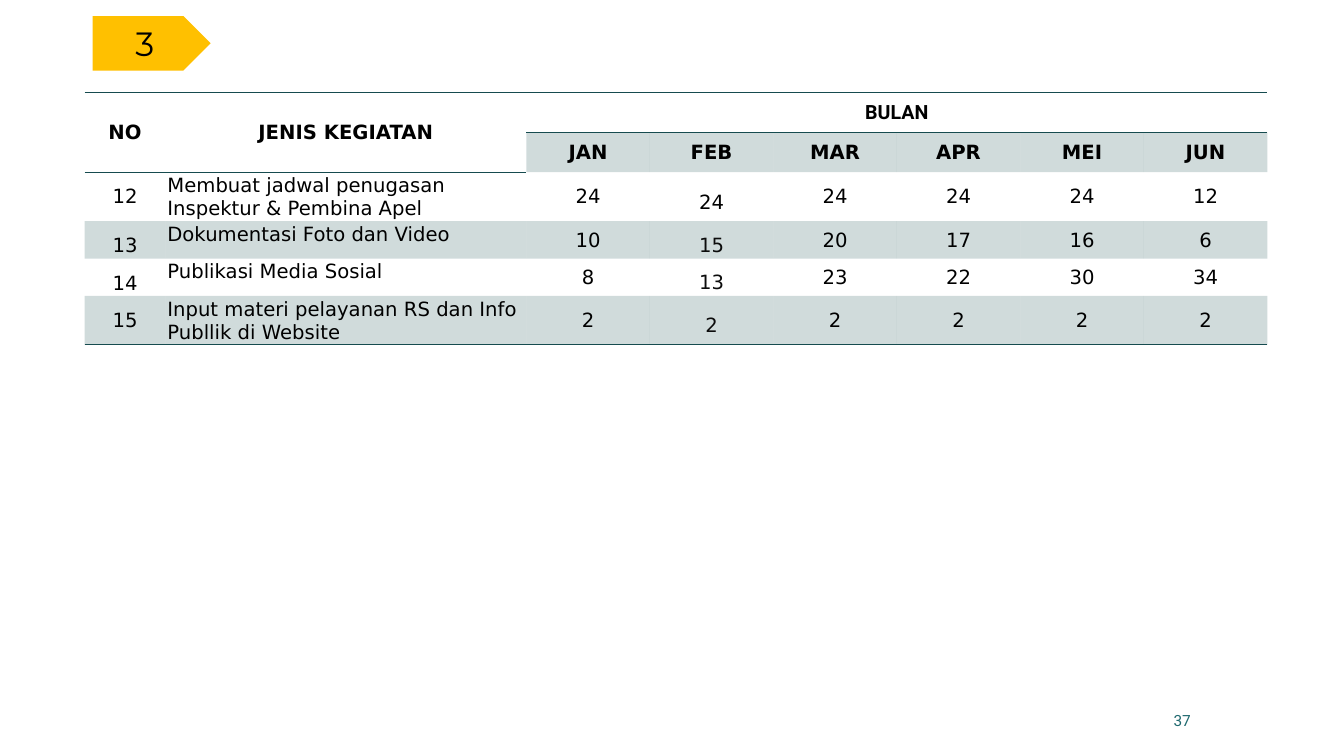
from dataclasses import dataclass

from lxml.etree import SubElement
from pptx import Presentation
from pptx.dml.color import RGBColor
from pptx.enum.shapes import MSO_SHAPE
from pptx.enum.text import MSO_ANCHOR, PP_ALIGN
from pptx.oxml import parse_xml
from pptx.oxml.ns import nsdecls, qn
from pptx.util import Inches, Pt

COLORS = {"ink": "000000", "soft": "0C0C0C", "teal": "164B4F",
          "page": "1F696F", "gold": "FFC000"}
NO_GRID_STYLE = "{2D5ABB26-0587-4C30-8999-92F81FD0307C}"


@dataclass(frozen=True)
class CellStyle:
    margins: tuple[float, float, float, float]  # left, top, right, bottom
    align: PP_ALIGN = PP_ALIGN.CENTER
    anchor: MSO_ANCHOR = MSO_ANCHOR.MIDDLE
    spacing: float = 1.0
    bold: bool = False
    font: str = "DejaVu Sans"


@dataclass(frozen=True)
class Activity:
    no: int
    name: str
    counts: tuple[int, ...]
    height: float
    feb_color: str = "soft"


HEADER = CellStyle((0.2, 0.08, 0.2, 0.08), bold=True)
SPAN_HEADER = CellStyle((0.2, 0.08, 0.2, 0.08), bold=True, font="Roboto")
NUMBER = CellStyle((0.02, 0.02, 0.02, 0), anchor=MSO_ANCHOR.TOP, spacing=1.5)
NAME = CellStyle((0.02, 0.02, 0.02, 0), PP_ALIGN.LEFT, MSO_ANCHOR.TOP)
COUNT = CellStyle((0.01, 0.01, 0.01, 0))
FEB_COUNT = CellStyle((0.07, 0, 0.07, 0), spacing=1.5)

MONTHS = ("JAN", "FEB", "MAR", "APR", "MEI", "JUN")
ACTIVITIES = (
    Activity(12, "Membuat jadwal penugasan Inspektur & Pembina Apel",
             (24, 24, 24, 24, 24, 12), 0.47, "ink"),
    Activity(13, "Dokumentasi Foto dan Video", (10, 15, 20, 17, 16, 6), 0.36),
    Activity(14, "Publikasi Media Sosial", (8, 13, 23, 22, 30, 34), 0.36),
    Activity(15, "Input materi pelayanan RS dan Info Publlik di Website",
             (2, 2, 2, 2, 2, 2), 0.47),
)
HEADER_HEIGHT = 0.38
COLUMNS = (0.8, 3.58) + (1.225,) * len(MONTHS)


def rgb(name: str) -> RGBColor:
    return RGBColor.from_string(COLORS[name])


def set_text(tf, text: str, size: float, font: str, color: str,
             align: PP_ALIGN, bold: bool = False):
    tf.text = text
    p = tf.paragraphs[0]
    p.alignment = align
    r = p.runs[0]
    r.font.size, r.font.name, r.font.bold = Pt(size), font, bold
    r.font.color.rgb = rgb(color)
    return p


def write_cell(cell, text: str, style: CellStyle, color: str = "ink") -> None:
    p = set_text(cell.text_frame, text, 14, style.font, color, style.align, style.bold)
    p.line_spacing = style.spacing
    cell.vertical_anchor = style.anchor
    (cell.margin_left, cell.margin_top,
     cell.margin_right, cell.margin_bottom) = map(Inches, style.margins)


def fill_cell(cell, shaded: bool) -> None:
    if not shaded:
        cell.fill.background()
        return
    cell.fill.solid()
    cell.fill.fore_color.rgb = rgb("teal")
    tint = cell._tc.tcPr.find(f".//{qn('a:srgbClr')}")
    SubElement(tint, qn("a:alpha"), val="20000")


def rule_cell(cell, top: bool, bottom: bool) -> None:
    sides = [tag for tag, on in (("lnT", top), ("lnB", bottom)) if on]
    for i, tag in enumerate(sides):
        line = parse_xml(
            f'<a:{tag} {nsdecls("a")} w="12700"><a:solidFill>'
            f'<a:srgbClr val="{COLORS["teal"]}"/></a:solidFill></a:{tag}>')
        cell._tc.get_or_add_tcPr().insert(i, line)


def add_schedule(s) -> None:
    heights = [HEADER_HEIGHT] * 2 + [a.height for a in ACTIVITIES]
    frame = s.shapes.add_table(len(heights), len(COLUMNS), Inches(0.84), Inches(0.92),
                               Inches(sum(COLUMNS)), Inches(sum(heights)))
    table = frame.table
    table.first_row = table.horz_banding = False
    table._tbl.tblPr.find(qn("a:tableStyleId")).text = NO_GRID_STYLE
    for column, width in zip(table.columns, COLUMNS):
        column.width = Inches(width)
    for row, height in zip(table.rows, heights):
        row.height = Inches(height)

    # Header
    last = len(heights) - 1
    for c, title in enumerate(("NO", "JENIS KEGIATAN")):
        table.cell(0, c).merge(table.cell(1, c))
        write_cell(table.cell(0, c), title, HEADER)
    table.cell(0, 2).merge(table.cell(0, len(COLUMNS) - 1))
    write_cell(table.cell(0, 2), "BULAN", SPAN_HEADER)
    for c, month in enumerate(MONTHS, 2):
        write_cell(table.cell(1, c), month, HEADER)

    # Activities
    for r, activity in enumerate(ACTIVITIES, 2):
        write_cell(table.cell(r, 0), str(activity.no), NUMBER)
        write_cell(table.cell(r, 1), activity.name, NAME)
        for c, (month, count) in enumerate(zip(MONTHS, activity.counts), 2):
            if month == "FEB":
                write_cell(table.cell(r, c), str(count), FEB_COUNT, activity.feb_color)
            else:
                write_cell(table.cell(r, c), str(count), COUNT)

    # Bands and rules
    for r in range(len(heights)):
        for c in range(len(COLUMNS)):
            cell = table.cell(r, c)
            month_header = r == 1 and c >= 2
            fill_cell(cell, r % 2 == 1 and (r > 1 or month_header))
            rule_cell(cell, r == 0, r in (0, last) or (r == 1 and c < 2))


def add_section_tag(s) -> None:
    sp = s.shapes.add_shape(MSO_SHAPE.PENTAGON, Inches(0.92), Inches(0.16),
                            Inches(1.17), Inches(0.54))
    sp.shadow.inherit = False
    sp.fill.solid()
    sp.fill.fore_color.rgb = rgb("gold")
    sp.line.fill.background()
    sp.text_frame.vertical_anchor = MSO_ANCHOR.MIDDLE
    set_text(sp.text_frame, "3", 24, "Montserrat", "ink", PP_ALIGN.CENTER)


def add_page_number(s) -> None:
    tf = s.shapes.add_textbox(Inches(8.8), Inches(6.95),
                              Inches(3.11), Inches(0.4)).text_frame
    tf.word_wrap = True
    tf.vertical_anchor = MSO_ANCHOR.MIDDLE
    set_text(tf, "37", 11, "Roboto", "page", PP_ALIGN.RIGHT)


def main() -> None:
    prs = Presentation()
    prs.slide_width, prs.slide_height = Inches(13.33), Inches(7.5)
    s = prs.slides.add_slide(prs.slide_layouts[6])
    add_page_number(s)
    add_schedule(s)
    add_section_tag(s)
    prs.save("out.pptx")


if __name__ == "__main__":
    main()
